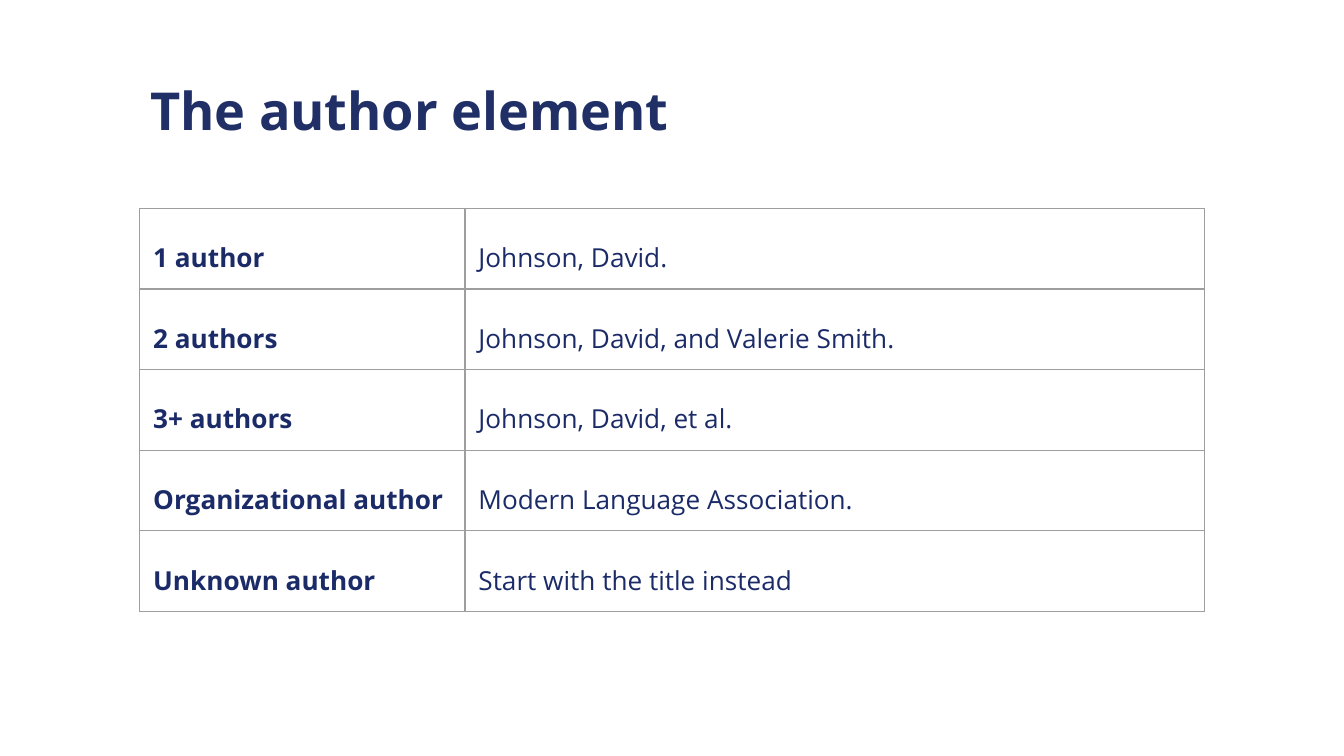
from lxml import etree
from pptx import Presentation
from pptx.dml.color import RGBColor
from pptx.enum import text
from pptx.oxml import ns
from pptx.util import Inches, Pt

TITLE = "The author element"
AUTHOR_FORMATS = [
    ("1 author", "Johnson, David."),
    ("2 authors", "Johnson, David, and Valerie Smith."),
    ("3+ authors", "Johnson, David, et al."),
    ("Organizational author", "Modern Language Association."),
    ("Unknown author", "Start with the title instead"),
]
SLIDE_WIDTH = 10
COLUMN_WIDTHS = (2.42, 5.5)
ROW_HEIGHT = 0.6
COLORS = {"title": "202F66", "body": "1B2B68", "border": "9E9E9E"}
FONT = "Open Sans"


def style(paragraph, size, color, bold):
    font = paragraph.runs[0].font
    font.name, font.size, font.bold = FONT, Pt(size), bold
    font.color.rgb = RGBColor.from_string(COLORS[color])


def set_margins(holder):
    holder.margin_left = holder.margin_right = Inches(0.1)
    holder.margin_top = holder.margin_bottom = Inches(0.1)


def add_borders(cell):
    properties = cell._tc.get_or_add_tcPr()
    for position, side in enumerate(("lnL", "lnR", "lnT", "lnB")):
        line = etree.Element(ns.qn(f"a:{side}"), w=str(Pt(0.75)))
        fill = etree.SubElement(line, ns.qn("a:solidFill"))
        etree.SubElement(fill, ns.qn("a:srgbClr"), val=COLORS["border"])
        properties.insert(position, line)


def add_title(slide):
    heading = slide.shapes.add_textbox(
        Inches(1.02), Inches(0.5), Inches(7.87), Inches(0.63)).text_frame
    heading.word_wrap = True
    heading.vertical_anchor = text.MSO_ANCHOR.MIDDLE
    set_margins(heading)
    heading.text = TITLE
    style(heading.paragraphs[0], 28, "title", True)


def add_author_table(slide):
    count = len(AUTHOR_FORMATS)
    authors = slide.shapes.add_table(
        count, len(COLUMN_WIDTHS), Inches(1.04), Inches(1.55),
        Inches(sum(COLUMN_WIDTHS)), Inches(ROW_HEIGHT * count)).table
    authors.first_row = authors.horz_banding = False
    for column, width in zip(authors.columns, COLUMN_WIDTHS):
        column.width = Inches(width)
    for row, entry in enumerate(AUTHOR_FORMATS):
        authors.rows[row].height = Inches(ROW_HEIGHT)
        for column, words in enumerate(entry):
            cell = authors.cell(row, column)
            set_margins(cell)
            cell.fill.background()
            add_borders(cell)
            cell.text_frame.text = words
            paragraph = cell.text_frame.paragraphs[0]
            paragraph.line_spacing = 1.5
            paragraph.space_after = Pt(16)
            style(paragraph, 14, "body", column == 0)


def main():
    deck = Presentation()
    deck.slide_width = Inches(SLIDE_WIDTH)
    deck.slide_height = Inches(SLIDE_WIDTH * 9 / 16)
    slide = deck.slides.add_slide(deck.slide_layouts[6])
    add_title(slide)
    add_author_table(slide)
    deck.save("out.pptx")


if __name__ == "__main__":
    main()
